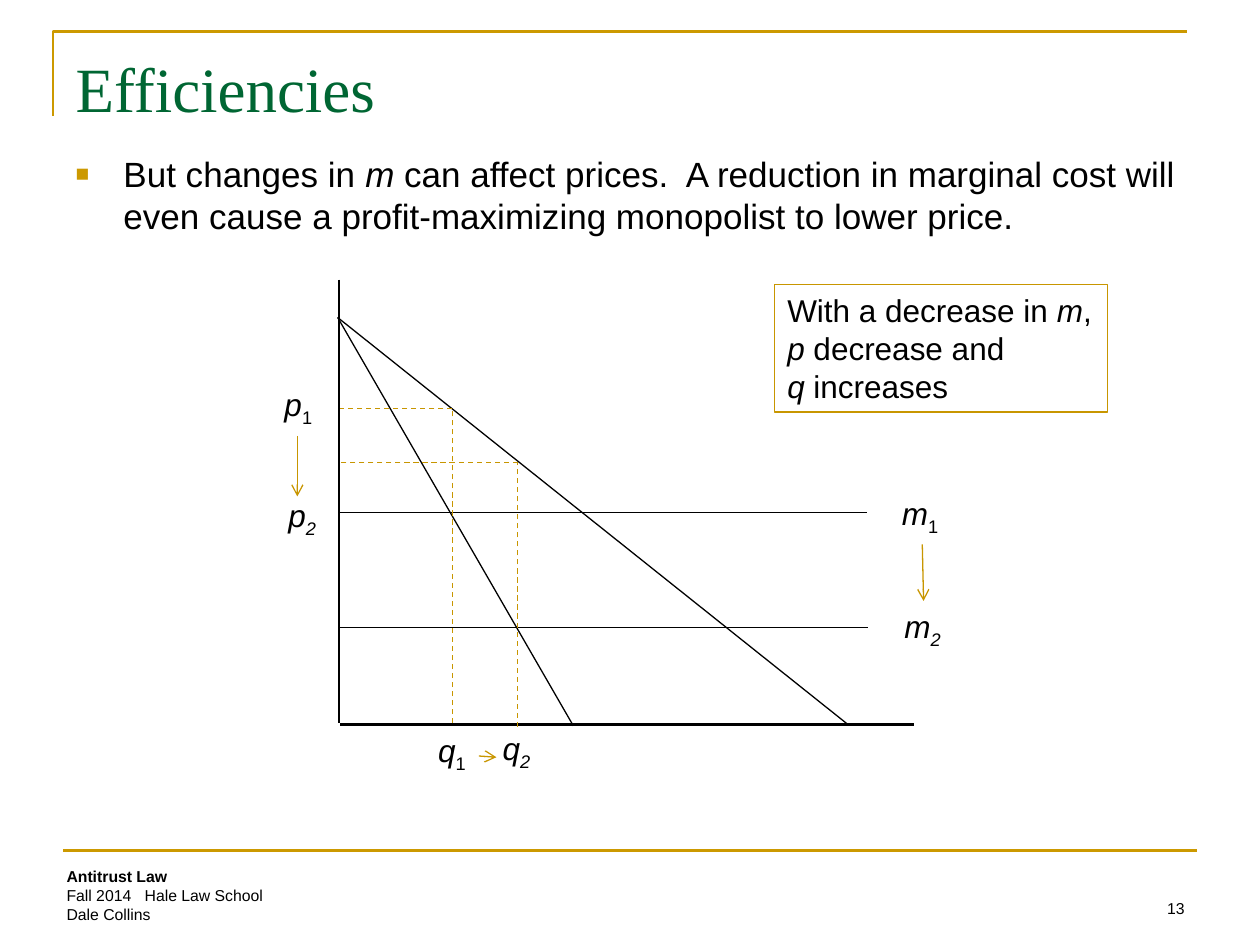
from dataclasses import dataclass
from typing import Any, NamedTuple, Optional

import pptx
import pptx.dml.color
import pptx.enum.dml
import pptx.enum.shapes
import pptx.enum.text
import pptx.util
from lxml import etree
from pptx.oxml.ns import qn

RGBColor = pptx.dml.color.RGBColor
Anchor = pptx.enum.text.MSO_ANCHOR
Align = pptx.enum.text.PP_ALIGN
AutoSize = pptx.enum.text.MSO_AUTO_SIZE
Dash = pptx.enum.dml.MSO_LINE

BLACK = RGBColor(0x00, 0x00, 0x00)
GREEN = RGBColor(0x00, 0x66, 0x33)
FRAME_GOLD = RGBColor(0xCC, 0x99, 0x00)
GOLD = RGBColor(0xC8, 0x96, 0x00)

# The slide is a grid of 100 columns and 75 rows.
COLUMNS, ROWS = 100, 75
WIDTH, HEIGHT = pptx.util.Inches(10), pptx.util.Inches(7.5)

# Diagram positions on the grid
AXIS_X, AXIS_Y = 26.9, 57.5
INTERCEPT_Y = 25.2
Q1_X, Q2_X = 35.9, 41.1
P1_Y, P2_Y = 32.4, 36.7
M1_Y, M2_Y = 40.7, 49.8


class Run(NamedTuple):
    text: str
    format: dict[str, Any] = {}
    baseline: int = 0


class Box(NamedTuple):
    column: float
    row: float
    columns: float
    rows: float


@dataclass(frozen=True)
class Line:
    start: tuple[float, float]
    end: tuple[float, float]
    color: RGBColor = BLACK
    weight: float = 0.75
    dash: Optional[Any] = None
    arrow: bool = False


@dataclass(frozen=True)
class VariableLabel:
    letter: str
    index: str
    box: Box


ITALIC = {"italic": True}

AXES = [
    Line((AXIS_X, 22.2), (AXIS_X, 57.4), weight=1.5),
    Line((27, AXIS_Y), (72.5, AXIS_Y), weight=1.5),
]
CURVES = [
    Line((26.8, INTERCEPT_Y), (67.3, AXIS_Y)),
    Line((26.8, INTERCEPT_Y), (45.5, 57.6)),
    Line((AXIS_X, M1_Y), (68.8, M1_Y)),
    Line((27, M2_Y), (68.9, M2_Y)),
]
GUIDES = [
    Line(start, end, GOLD, dash=Dash.DASH)
    for start, end in [
        ((Q2_X, 57.7), (Q2_X, P2_Y)),
        ((Q1_X, 57.4), (Q1_X, P1_Y)),
        ((Q1_X, P1_Y), (27, P1_Y)),
        ((Q2_X, P2_Y), (27, P2_Y)),
    ]
]
CHANGES = [
    Line(start, end, GOLD, arrow=True)
    for start, end in [
        ((73.2, 43.2), (73.3, 47.7)),
        ((23.6, 34.6), (23.6, 39.4)),
        ((38, 60), (39.4, 60.1)),
    ]
]
LABELS = [
    VariableLabel("m", "1", Box(70.6, 38.7, 5.1, 4)),
    VariableLabel("m", "2", Box(70.8, 47.7, 5.1, 4)),
    VariableLabel("p", "1", Box(21.6, 30.1, 4.4, 4)),
    VariableLabel("p", "2", Box(21.9, 38.9, 4.4, 4)),
    VariableLabel("q", "1", Box(33.8, 57.5, 4.4, 4)),
    VariableLabel("q", "2", Box(38.9, 57.4, 4.4, 4)),
]


def across(columns: float) -> int:
    return round(WIDTH * columns / COLUMNS)


def down(rows: float) -> int:
    return round(HEIGHT * rows / ROWS)


def on_grid(box: Box) -> tuple[int, int, int, int]:
    return across(box.column), down(box.row), across(box.columns), down(box.rows)


def apply_format(target: Any, values: dict[str, Any]) -> None:
    for name, value in values.items():
        setattr(target, name, value)


def add_runs(paragraph: Any, runs: list[Run], size: float,
             font: str = "Arial", color: RGBColor = BLACK) -> None:
    for part in runs:
        run = paragraph.add_run()
        run.text = part.text
        apply_format(run.font, {"name": font, "size": pptx.util.Pt(size), **part.format})
        run.font.color.rgb = color
        if part.baseline:
            run.font._element.set("baseline", str(part.baseline * 1000))


def add_text(shapes: Any, box: Box, runs: list[Run], size: float, **frame_format: Any) -> Any:
    frame = shapes.add_textbox(*on_grid(box)).text_frame
    apply_format(frame, {"word_wrap": True, **frame_format})
    add_runs(frame.paragraphs[0], runs, size)
    return frame.paragraphs[0]


def add_line(shapes: Any, line: Line) -> None:
    connector = shapes.add_connector(
        pptx.enum.shapes.MSO_CONNECTOR.STRAIGHT,
        across(line.start[0]), down(line.start[1]), across(line.end[0]), down(line.end[1]))
    connector.line.color.rgb = line.color
    connector.line.width = pptx.util.Pt(line.weight)
    if line.dash is not None:
        connector.line.dash_style = line.dash
    if line.arrow:
        etree.SubElement(connector.line._get_or_add_ln(), qn("a:tailEnd"), type="arrow")
    etree.SubElement(connector._element.spPr, qn("a:effectLst"))


def add_frame(shapes: Any) -> None:
    corner = shapes.build_freeform(across(4.2), down(9.2))
    corner.add_line_segments([(across(4.2), down(2.5)), (across(94.2), down(2.5))], close=False)
    outline = corner.convert_to_shape()
    outline.shadow.inherit = False
    outline.fill.background()
    outline.line.color.rgb = FRAME_GOLD
    outline.line.width = pptx.util.Pt(1.5)
    add_line(shapes, Line((5, 67.5), (95, 67.5), FRAME_GOLD, 1.5))


def add_footer(shapes: Any) -> None:
    course = add_text(shapes, Box(4.3, 68.3, 46.7, 5.6),
                      [Run("Antitrust Law", {"bold": True})], 9)
    for line in ("Fall 2014\tHale Law School", "Dale Collins"):
        course.add_line_break()
        add_runs(course, [Run(line)], 9)
    tabs = etree.SubElement(course._p.get_or_add_pPr(), qn("a:tabLst"))
    etree.SubElement(tabs, qn("a:tab"), pos=str(across(6.2)), algn="l")
    number = add_text(shapes, Box(71.7, 68.3, 23.3, 5), [Run("13")], 9,
                      vertical_anchor=Anchor.BOTTOM)
    number.alignment = Align.RIGHT


def place(placeholder: Any, box: Box, anchor: Any) -> Any:
    """Move a placeholder onto the grid and return its first paragraph."""
    apply_format(placeholder, dict(zip(("left", "top", "width", "height"), on_grid(box))))
    apply_format(placeholder.text_frame, {
        "auto_size": AutoSize.NONE, "word_wrap": True, "vertical_anchor": anchor})
    return placeholder.text_frame.paragraphs[0]


def fill_placeholders(slide: Any) -> None:
    title = place(slide.shapes.title, Box(5, 3, 90, 7.8), Anchor.MIDDLE)
    title.alignment = Align.LEFT
    add_runs(title, [Run("Efficiencies")], 36, "Times New Roman", GREEN)

    point = place(slide.placeholders[1], Box(5, 11.6, 90, 54.6), Anchor.TOP)
    point.space_before = pptx.util.Pt(12)
    add_runs(point, [
        Run("But changes in "), Run("m", ITALIC),
        Run(" can affect prices.  A reduction in marginal cost will even cause "
            "a profit-maximizing monopolist to lower price.")], 20)
    properties = point._p.get_or_add_pPr()
    apply_indent = {"marL": across(3.8), "indent": -across(3.8)}
    for name, value in apply_indent.items():
        properties.set(name, str(value))
    bullet_color = etree.SubElement(properties, qn("a:buClr"))
    etree.SubElement(bullet_color, qn("a:srgbClr"), val=str(FRAME_GOLD))
    etree.SubElement(properties, qn("a:buSzPct"), val="65000")
    etree.SubElement(properties, qn("a:buFont"), typeface="Arial")
    etree.SubElement(properties, qn("a:buChar"), char="■")


def add_conclusion(shapes: Any) -> None:
    conclusion = shapes.add_shape(pptx.enum.shapes.MSO_SHAPE.RECTANGLE,
                                  *on_grid(Box(61.5, 22.6, 26.4, 10.1)))
    conclusion.shadow.inherit = False
    conclusion.fill.background()
    conclusion.line.color.rgb = GOLD
    conclusion.line.width = pptx.util.Pt(0.75)
    frame = conclusion.text_frame
    apply_format(frame, {"word_wrap": False, "auto_size": AutoSize.SHAPE_TO_FIT_TEXT,
                         "vertical_anchor": Anchor.TOP})
    statements = [
        [Run("With a decrease in "), Run("m", ITALIC), Run(",")],
        [Run("p", ITALIC), Run(" decrease and")],
        [Run("q", ITALIC), Run(" increases")],
    ]
    for position, runs in enumerate(statements):
        paragraph = frame.add_paragraph() if position else frame.paragraphs[0]
        paragraph.alignment = Align.LEFT
        add_runs(paragraph, runs, 18)


def main() -> None:
    deck = pptx.Presentation()
    deck.slide_width, deck.slide_height = WIDTH, HEIGHT
    slide = deck.slides.add_slide(deck.slide_layouts[1])
    add_frame(slide.shapes)
    add_footer(slide.shapes)
    fill_placeholders(slide)
    for line in AXES + CURVES + GUIDES:
        add_line(slide.shapes, line)
    for label in LABELS:
        index_format = ITALIC if label.index == "2" else {}
        add_text(slide.shapes, label.box,
                 [Run(label.letter, ITALIC), Run(label.index, index_format, -25)], 18,
                 word_wrap=False, auto_size=AutoSize.SHAPE_TO_FIT_TEXT)
    for line in CHANGES:
        add_line(slide.shapes, line)
    add_conclusion(slide.shapes)
    deck.save("out.pptx")


if __name__ == "__main__":
    main()
